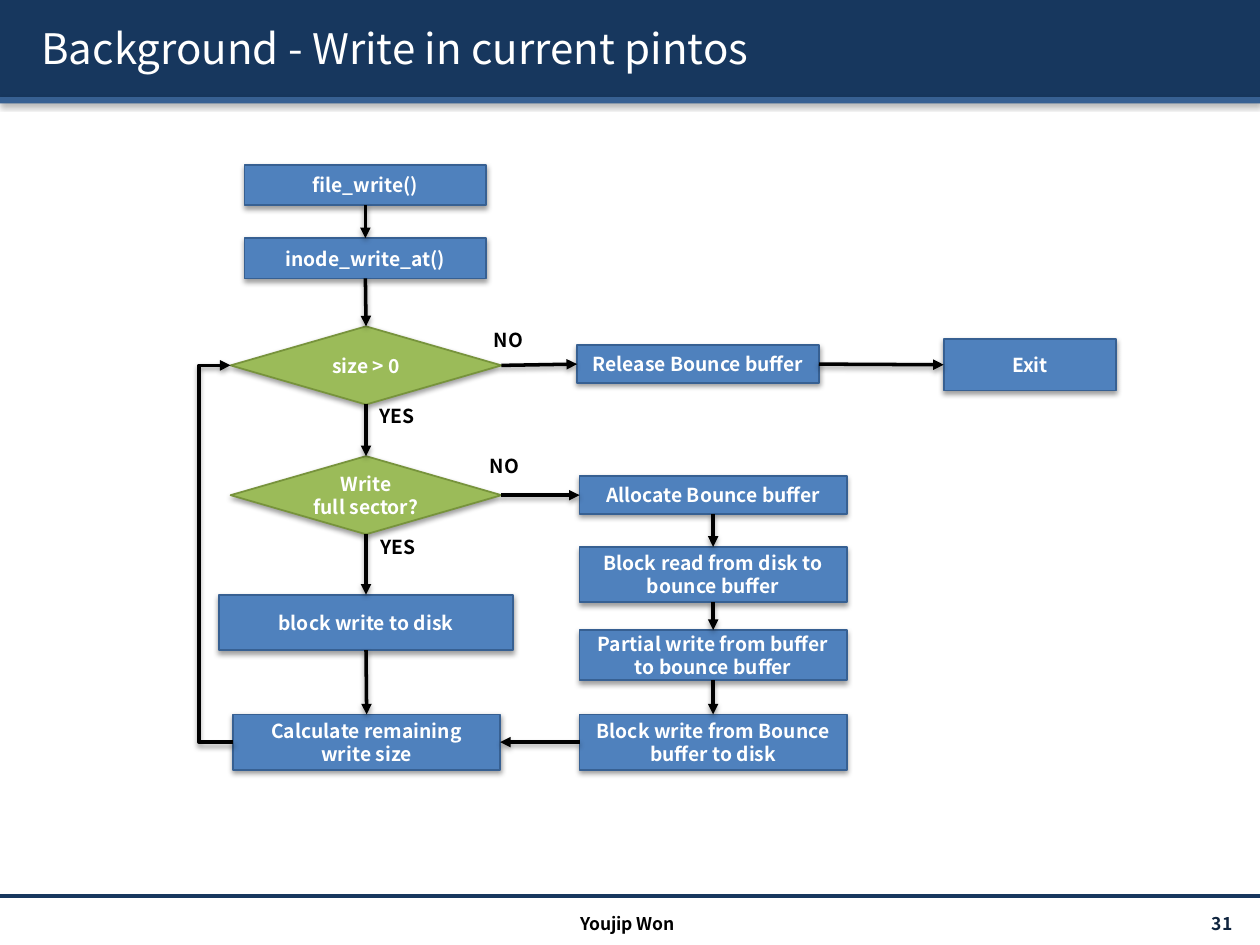
"""Build the slide that charts how pintos currently writes a file."""
from dataclasses import dataclass

from lxml import etree
from pptx import Presentation
from pptx.dml.color import RGBColor
from pptx.enum.shapes import MSO_CONNECTOR, MSO_SHAPE
from pptx.enum.text import MSO_ANCHOR, PP_ALIGN
from pptx.oxml.ns import qn
from pptx.util import Inches, Pt

RECTANGLE, DIAMOND = MSO_SHAPE.RECTANGLE, MSO_SHAPE.DIAMOND
STRAIGHT, ELBOW = MSO_CONNECTOR.STRAIGHT, MSO_CONNECTOR.ELBOW
LEFT, CENTER, RIGHT = PP_ALIGN.LEFT, PP_ALIGN.CENTER, PP_ALIGN.RIGHT
TOP, MIDDLE = MSO_ANCHOR.TOP, MSO_ANCHOR.MIDDLE
TOP_SIDE, LEFT_SIDE, BOTTOM_SIDE, RIGHT_SIDE = range(4)

FONT = "Noto Sans CJK KR"
WHITE = RGBColor(0xFF, 0xFF, 0xFF)
BLACK = RGBColor(0, 0, 0)
NAVY = RGBColor(0x17, 0x37, 0x5E)
DARK_NAVY = RGBColor(0x0F, 0x24, 0x3E)
STEEL = RGBColor(0x37, 0x60, 0x92)
BLUE = RGBColor(0x4F, 0x81, 0xBD)
GREEN = RGBColor(0x9B, 0xBB, 0x59)
DARK_GREEN = RGBColor(0x77, 0x93, 0x3C)
LOOP_X = 1.58


@dataclass(frozen=True)
class Node:
    name: str
    text: str
    left: float
    top: float
    width: float
    height: float
    decision: bool = False


@dataclass(frozen=True)
class Flow:
    source: str
    target: str
    exit_side: int = BOTTOM_SIDE
    entry_side: int = TOP_SIDE


@dataclass(frozen=True)
class Label:
    text: str
    left: float
    top: float
    width: float
    wrap: bool


NODES = [
    Node("file", "file_write()", 1.94, 1.31, 1.92, 0.32),
    Node("inode", "inode_write_at()", 1.94, 1.89, 1.92, 0.32),
    Node("size", "size > 0", 1.83, 2.59, 2.15, 0.62, True),
    Node("sector", "Write\nfull sector?", 1.83, 3.62, 2.15, 0.62, True),
    Node("disk", "block write to disk", 1.74, 4.72, 2.33, 0.44),
    Node("remaining", "Calculate remaining write size", 1.85, 5.67, 2.12, 0.44),
    Node("release", "Release Bounce buffer", 4.58, 2.74, 1.92, 0.3),
    Node("exit", "Exit", 7.49, 2.69, 1.37, 0.41),
    Node("allocate", "Allocate Bounce buffer", 4.6, 3.78, 2.12, 0.3),
    Node("read", "Block read from disk to bounce buffer", 4.6, 4.34, 2.12, 0.44),
    Node("partial", "Partial write from buffer to bounce buffer", 4.6, 5, 2.12, 0.4),
    Node("write", "Block write from Bounce buffer to disk", 4.6, 5.67, 2.12, 0.44),
]
FLOWS = [
    Flow("file", "inode"),
    Flow("inode", "size"),
    Flow("size", "sector"),
    Flow("sector", "disk"),
    Flow("disk", "remaining"),
    Flow("size", "release", RIGHT_SIDE, LEFT_SIDE),
    Flow("release", "exit", RIGHT_SIDE, LEFT_SIDE),
    Flow("sector", "allocate", RIGHT_SIDE, LEFT_SIDE),
    Flow("allocate", "read"),
    Flow("read", "partial"),
    Flow("partial", "write"),
    Flow("write", "remaining", LEFT_SIDE, RIGHT_SIDE),
]
LOOP = Flow("remaining", "size", LEFT_SIDE, LEFT_SIDE)
LABELS = [
    Label("YES", 2.86, 3.16, 0.58, True),
    Label("NO", 3.82, 2.56, 0.52, False),
    Label("YES", 2.87, 4.2, 0.58, True),
    Label("NO", 3.79, 3.56, 0.52, False),
]


def add_shadow(properties, blur: float = 3.1, distance: float = 1.6,
               direction: int = 90, opacity: int = 38) -> None:
    effects = properties.find(qn("a:effectLst"))
    if effects is None:
        effects = etree.SubElement(properties, qn("a:effectLst"))
    shadow = etree.SubElement(effects, qn("a:outerShdw"), blurRad=str(Pt(blur)),
                              dist=str(Pt(distance)), dir=str(direction * 60000),
                              algn="ctr", rotWithShape="0")
    color = etree.SubElement(shadow, qn("a:srgbClr"), val=str(BLACK))
    etree.SubElement(color, qn("a:alpha"), val=str(opacity * 1000))


def write_text(box, text: str, *, size: float = 11, color: RGBColor = WHITE,
               bold: bool = True, align: PP_ALIGN = CENTER,
               anchor: MSO_ANCHOR = MIDDLE, wrap: bool = True):
    frame = box.text_frame
    frame.word_wrap = wrap
    frame.vertical_anchor = anchor
    frame.text = text
    for para in frame.paragraphs:
        para.alignment = align
        for span in para.runs:
            font = span.font
            font.name, font.size, font.bold = FONT, Pt(size), bold
            font.color.rgb = color
    return frame


def add_text(page, text: str, left: float, top: float, width: float,
             height: float, **style):
    box = page.shapes.add_textbox(Inches(left), Inches(top), Inches(width), Inches(height))
    return write_text(box, text, **style)


def add_block(page, left: float, top: float, width: float, height: float,
              fill: RGBColor, line: RGBColor | None = None, kind: MSO_SHAPE = RECTANGLE):
    block = page.shapes.add_shape(kind, Inches(left), Inches(top), Inches(width), Inches(height))
    block.fill.solid()
    block.fill.fore_color.rgb = fill
    if line is None:
        block.line.fill.background()
    else:
        block.line.color.rgb = line
        block.line.width = Pt(1)
    block.shadow.inherit = False
    add_shadow(block._element.spPr)
    return block


def add_node(page, node: Node):
    fill, line, kind = (GREEN, DARK_GREEN, DIAMOND) if node.decision else (BLUE, STEEL, RECTANGLE)
    block = add_block(page, node.left, node.top, node.width, node.height, fill, line, kind)
    write_text(block, node.text)
    return block


def add_flow(page, blocks: dict, flow: Flow, kind: MSO_CONNECTOR = STRAIGHT):
    arrow = page.shapes.add_connector(kind, 0, 0, 0, 0)
    arrow.begin_connect(blocks[flow.source], flow.exit_side)
    arrow.end_connect(blocks[flow.target], flow.entry_side)
    arrow.line.color.rgb = BLACK
    arrow.line.width = Pt(2)
    properties = arrow._element.spPr
    etree.SubElement(properties.find(qn("a:ln")), qn("a:tailEnd"), type="triangle")
    add_shadow(properties)
    return arrow


def add_loop(page, blocks: dict) -> None:
    arrow = add_flow(page, blocks, LOOP, ELBOW)
    bend = round((arrow.begin_x - Inches(LOOP_X)) / arrow.width * 100000)
    guides = arrow._element.spPr.find(qn("a:prstGeom")).get_or_add_avLst()
    etree.SubElement(guides, qn("a:gd"), name="adj1", fmla=f"val {bend}")


def add_frame(page) -> None:
    add_block(page, 0, 0, 10, 0.77, NAVY)
    add_block(page, 0, 0.77, 10, 0.05, STEEL)
    rule = page.shapes.add_connector(STRAIGHT, 0, Inches(7.11), Inches(10), Inches(7.11))
    rule.line.color.rgb = NAVY
    rule.line.width = Pt(2)
    etree.SubElement(rule._element.spPr, qn("a:effectLst"))
    title = add_text(page, "Background - Write in current pintos", 0.23, 0.06, 9.61, 0.64,
                     size=24, bold=False, align=LEFT)
    span = title.paragraphs[0].runs[0]
    effects = etree.Element(qn("a:effectLst"))
    span.font._element.find(qn("a:solidFill")).addnext(effects)
    add_shadow(span.font._element, 3, 3, 45, 43)
    add_text(page, "31", 8.71, 7.21, 1.17, 0.24, size=10, color=DARK_NAVY, align=RIGHT)
    add_text(page, "Youjip Won", 3.32, 7.2, 3.32, 0.24, size=10, color=BLACK, anchor=TOP)


def main() -> None:
    deck = Presentation()
    deck.slide_width, deck.slide_height = Inches(10), Inches(7.5)
    page = deck.slides.add_slide(deck.slide_layouts[6])
    add_frame(page)
    blocks = {node.name: add_node(page, node) for node in NODES}
    for flow in FLOWS:
        add_flow(page, blocks, flow)
    add_loop(page, blocks)
    for label in LABELS:
        add_text(page, label.text, label.left, label.top, label.width, 0.32, color=BLACK,
                 align=CENTER if label.wrap else LEFT, anchor=TOP, wrap=label.wrap)
    deck.save("out.pptx")


if __name__ == "__main__":
    main()
